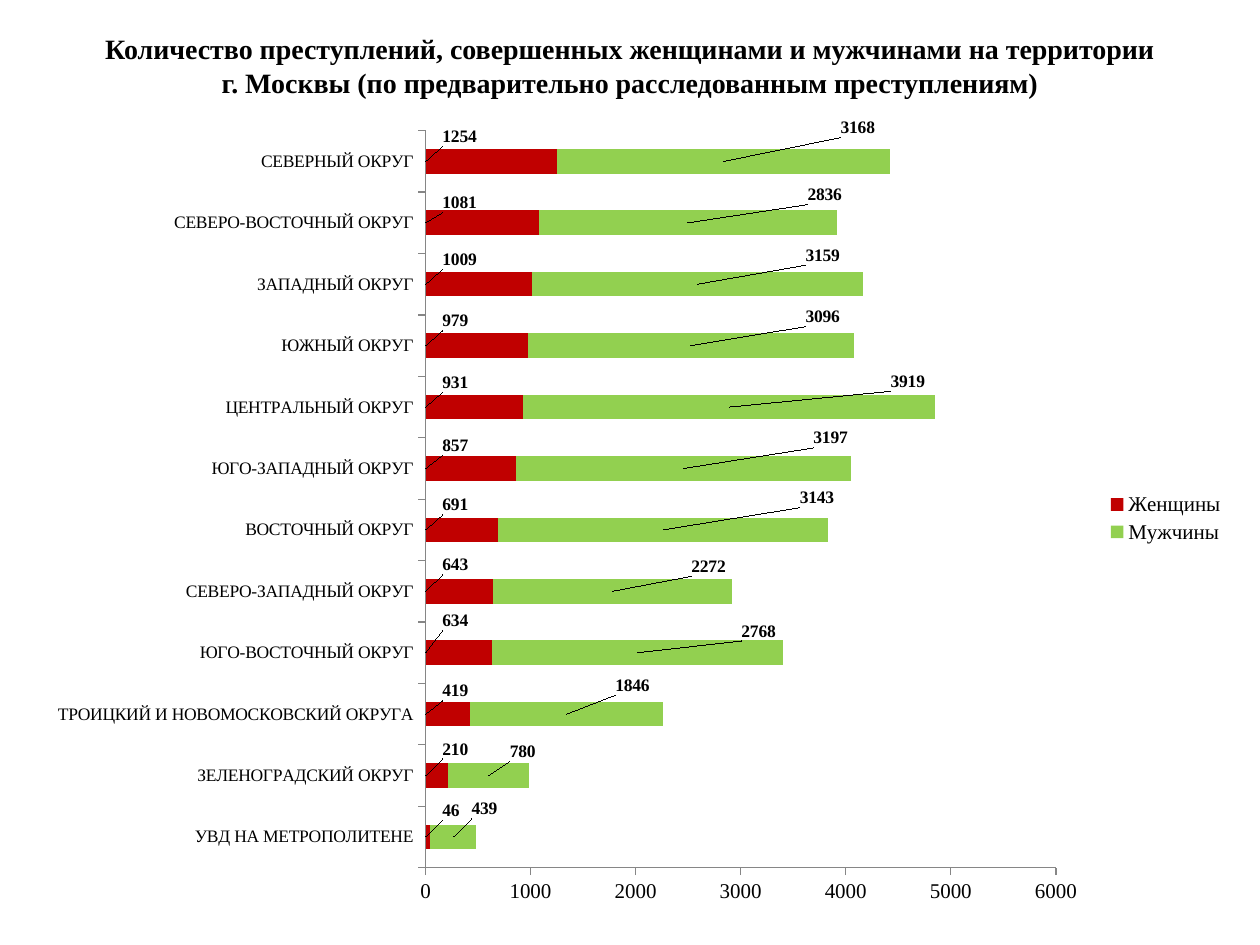
from lxml import etree
from pptx import Presentation
from pptx.chart.data import CategoryChartData
from pptx.dml.color import RGBColor as RGB
from pptx.enum.chart import XL_CHART_TYPE as CT, XL_LABEL_POSITION as LP
from pptx.enum.chart import XL_LEGEND_POSITION as LEG, XL_TICK_MARK as TM
from pptx.enum.text import MSO_ANCHOR, PP_ALIGN
from pptx.oxml.ns import qn
from pptx.util import Inches, Pt

THEME = {
    "font": "Times New Roman",
    "text": RGB(0, 0, 0),
    "axis": RGB(0x86, 0x86, 0x86),
    "women": RGB(0xC0, 0, 0),
    "men": RGB(0x92, 0xD0, 0x50),
    "title": Pt(16),
    "body": Pt(12),
    "small": Pt(10),
}
TITLE = [
    "Количество преступлений, совершенных женщинами и мужчинами на территории",
    "г. Москвы (по предварительно расследованным преступлениям)",
]
# district, women, men, women label rise %, men label centre on axis, men label rise %
ROWS = [
    ("УВД НА МЕТРОПОЛИТЕНЕ", 46, 439, 3.3, 560, 3.5),
    ("ЗЕЛЕНОГРАДСКИЙ ОКРУГ", 210, 780, 3.3, 925, 3),
    ("ТРОИЦКИЙ И НОВОМОСКОВСКИЙ ОКРУГА", 419, 1846, 2.9, 1970, 3.6),
    ("ЮГО-ВОСТОЧНЫЙ ОКРУГ", 634, 2768, 4, 3170, 2.7),
    ("СЕВЕРО-ЗАПАДНЫЙ ОКРУГ", 643, 2272, 3.3, 2695, 3.1),
    ("ВОСТОЧНЫЙ ОКРУГ", 691, 3143, 3.1, 3725, 4),
    ("ЮГО-ЗАПАДНЫЙ ОКРУГ", 857, 3197, 2.9, 3855, 3.8),
    ("ЦЕНТРАЛЬНЫЙ ОКРУГ", 931, 3919, 3.1, 4590, 3.2),
    ("ЮЖНЫЙ ОКРУГ", 979, 3096, 3.1, 3780, 3.6),
    ("ЗАПАДНЫЙ ОКРУГ", 1009, 3159, 3.1, 3780, 3.6),
    ("СЕВЕРО-ВОСТОЧНЫЙ ОКРУГ", 1081, 2836, 2.5, 3800, 3.5),
    ("СЕВЕРНЫЙ ОКРУГ", 1254, 3168, 3.1, 4115, 4.2),
]
AXIS_MAX = 6000
PLOT_W = 52.5


def set_font(font, size, bold=False):
    font.name, font.size, font.bold = THEME["font"], size, bold
    font.color.rgb = THEME["text"]


def set_layout(el, index, modes, **percents):
    for old in el.findall(qn("c:layout")):
        el.remove(old)
    layout = etree.Element(qn("c:layout"))
    manual = etree.SubElement(layout, qn("c:manualLayout"))
    for tag, val in modes.items():
        etree.SubElement(manual, qn("c:" + tag)).set("val", val)
    for tag, val in percents.items():
        etree.SubElement(manual, qn("c:" + tag)).set("val", f"{val / 100:.4f}")
    el.insert(index, layout)


prs = Presentation()
prs.slide_width, prs.slide_height = Inches(10), Inches(7.5)
W, H = prs.slide_width, prs.slide_height
s = prs.slides.add_slide(prs.slide_layouts[5])

title = s.shapes.title
title.left, title.top = 0, round(H * 0.017)
title.width, title.height = W, round(H * 0.104)
tf = title.text_frame
tf.word_wrap = True
tf.vertical_anchor = MSO_ANCHOR.MIDDLE
for i, line in enumerate(TITLE):
    p = tf.paragraphs[0] if i == 0 else tf.add_paragraph()
    p.alignment = PP_ALIGN.CENTER
    p.space_before = Pt(0)
    r = p.add_run()
    r.text = line
    set_font(r.font, THEME["title"], True)

data = CategoryChartData()
data.categories = [row[0] for row in ROWS]
data.add_series("Женщины", [row[1] for row in ROWS])
data.add_series("Мужчины", [row[2] for row in ROWS])
chart = s.shapes.add_chart(
    CT.BAR_STACKED, Inches(0.28), Inches(0.91), Inches(9.53), Inches(6.38), data
).chart
chart.has_title = False
set_font(chart.font, THEME["body"])

for axis, size in ((chart.category_axis, "small"), (chart.value_axis, "body")):
    axis.has_major_gridlines = False
    axis.major_tick_mark = TM.OUTSIDE
    axis.minor_tick_mark = TM.NONE
    axis.format.line.color.rgb = THEME["axis"]
    axis.format.line.width = Pt(0.75)
    set_font(axis.tick_labels.font, THEME[size])
chart.value_axis.minimum_scale = 0
chart.value_axis.maximum_scale = AXIS_MAX
chart.value_axis.major_unit = 1000

chart.has_legend = True
legend = chart.legend
legend.position = LEG.RIGHT
legend.include_in_layout = False
set_font(legend.font, THEME["body"])

edge = {"xMode": "edge", "yMode": "edge"}
plot_area = chart._chartSpace.find(".//" + qn("c:plotArea"))
set_layout(plot_area, 0, {"layoutTarget": "inner", **edge}, x=32.5, y=2, w=PLOT_W, h=91.7)
set_layout(legend._element, 1, edge, x=89, y=46.5)

plot = chart.plots[0]
plot.gap_width, plot.overlap = 150, 100
plot.vary_by_categories = False
women_shifts = [(1, -row[3]) for row in ROWS]
men_shifts = [
    ((centre - women - men / 2) / AXIS_MAX * PLOT_W, -rise)
    for _, women, men, _, centre, rise in ROWS
]
for ser, color, pos, shifts in zip(
    plot.series, ("women", "men"), (LP.INSIDE_BASE, LP.CENTER), (women_shifts, men_shifts)
):
    ser.format.fill.solid()
    ser.format.fill.fore_color.rgb = THEME[color]
    ser.data_labels.show_value = True
    ser.data_labels.position = pos
    set_font(ser.data_labels.font, THEME["small"], True)
    for i in range(len(ROWS)):
        label = ser.points[i].data_label
        set_font(label.font, THEME["small"], True)
        label.position = pos
    for el, (dx, dy) in zip(ser._element.iter(qn("c:dLbl")), shifts):
        set_layout(el, 1, {}, x=dx, y=dy)

prs.save("out.pptx")
